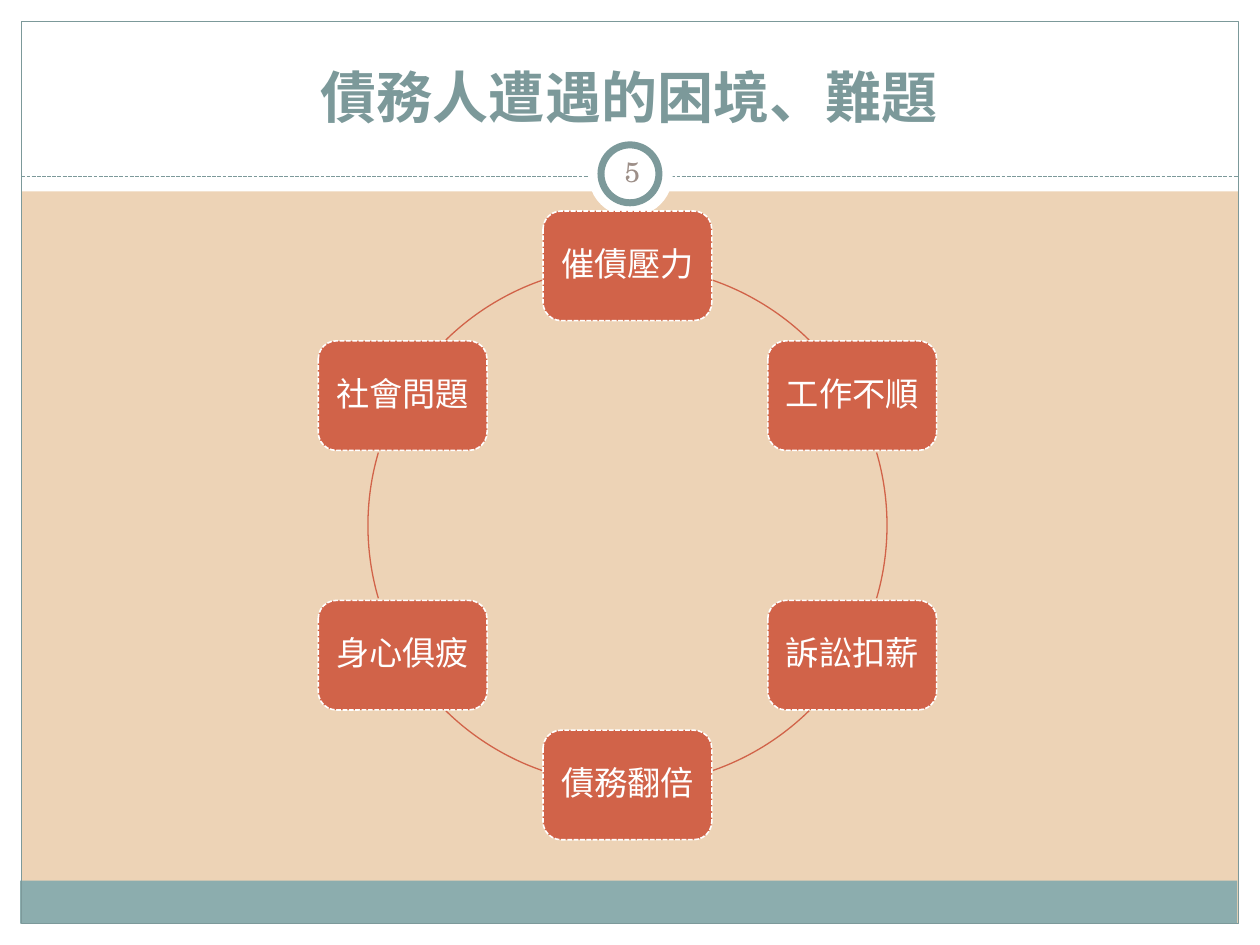
"""Build a slide with six debtor difficulties arranged around a circle."""
from math import cos, radians, sin

from lxml.etree import SubElement
from pptx import Presentation
from pptx.dml.color import RGBColor
from pptx.enum.dml import MSO_LINE
from pptx.enum.shapes import MSO_CONNECTOR, MSO_SHAPE as Shape
from pptx.enum.text import MSO_ANCHOR as Anchor, MSO_AUTO_SIZE, PP_ALIGN
from pptx.oxml.ns import qn
from pptx.util import Inches, Pt

TITLE = "債務人遭遇的困境、難題"
PAGE = "5"
PROBLEMS = ["催債壓力", "工作不順", "訴訟扣薪", "債務翻倍", "身心俱疲", "社會問題"]
ARCS = [(289.2, 314.4), (343.7, 16.3), (45.6, 70.8),
        (109.2, 134.4), (163.7, 196.3), (225.6, 250.8)]

THEME = {
    "font": "TeX Gyre Schola",
    "sand": "EDD3B6", "white": "FFFFFF", "teal": "7C999A",
    "band": "8CADAE", "red": "D16349", "number": "9D8F88",
    "title_size": 32, "node_size": 19, "number_size": 16,
}
W, H, MARGIN = 10, 7.5, 0.17
CX, CY, RADIUS = 4.98, 4.17, 2.06
NODE_W, NODE_H = 1.34, 0.87
PANELS = [
    (Shape.RECTANGLE, (0, H - MARGIN, W, MARGIN), "white", None, 0),
    (Shape.RECTANGLE, (0, 0, W, 1.52), "white", None, 0),
    (Shape.RECTANGLE, (0, 0, MARGIN, H), "white", None, 0),
    (Shape.RECTANGLE, (W - MARGIN, 0, MARGIN, H), "white", None, 0),
    (Shape.RECTANGLE, (0.16, 6.99, 9.66, 0.34), "band", None, 0),
    (Shape.RECTANGLE, (MARGIN, MARGIN, 9.66, 7.16), None, "teal", 0.75),
]
BADGE = [
    (Shape.OVAL, (4.67, 1.05, 0.67, 0.67), "white", None, 0),
    (Shape.OVAL, (4.77, 1.15, 0.46, 0.46), "white", "teal", 4),
]


def color(name):
    return RGBColor.from_string(THEME[name])


def place(sp, box):
    sp.left, sp.top, sp.width, sp.height = map(Inches, box)


def set_line(line, name, width, dashed=False):
    line.color.rgb = color(name)
    line.width = Pt(width)
    if dashed:
        line.dash_style = MSO_LINE.SQUARE_DOT


def add_shape(s, kind, box, fill=None, line=None, width=0, dashed=False):
    sp = s.shapes.add_shape(kind, *map(Inches, box))
    sp.shadow.inherit = False
    if fill:
        sp.fill.solid()
        sp.fill.fore_color.rgb = color(fill)
    else:
        sp.fill.background()
    if line:
        set_line(sp.line, line, width, dashed)
    else:
        sp.line.fill.background()
    return sp


def write(sp, text, size, fill, bold=False, anchor=Anchor.MIDDLE,
          inset=(0.05, 0.05), spacing=None):
    tf = sp.text_frame
    tf.word_wrap = True
    tf.auto_size = MSO_AUTO_SIZE.NONE
    tf.vertical_anchor = anchor
    tf.margin_left = tf.margin_right = Inches(inset[0])
    tf.margin_top = tf.margin_bottom = Inches(inset[1])
    p = tf.paragraphs[0]
    p.alignment = PP_ALIGN.CENTER
    if spacing:
        p.line_spacing = spacing
    r = p.add_run()
    r.text = text
    r.font.name = THEME["font"]
    r.font.size = Pt(THEME[size])
    r.font.bold = bold
    r.font.color.rgb = color(fill)


def add_frame(s):
    for panel in PANELS:
        add_shape(s, *panel)
    rule = s.shapes.add_connector(
        MSO_CONNECTOR.STRAIGHT, *map(Inches, (MARGIN, 1.4, W - MARGIN, 1.4)))
    set_line(rule.line, "teal", 0.75, dashed=True)
    SubElement(rule.element.spPr, qn("a:effectLst"))
    for circle in BADGE:
        add_shape(s, *circle)


def add_headings(s):
    title = s.shapes.title
    title.element.getparent().append(title.element)
    place(title, (0.33, 0.25, 9.33, 0.83))
    write(title, TITLE, "title_size", "teal", bold=True,
          anchor=Anchor.BOTTOM, inset=(0.1, 0.05))
    number = s.shapes.add_textbox(*map(Inches, (4.77, 1.12, 0.5, 0.48)))
    write(number, PAGE, "number_size", "number")


def add_cycle(s):
    ring = (CX - RADIUS, CY - RADIUS, 2 * RADIUS, 2 * RADIUS)
    for i, (text, arc) in enumerate(zip(PROBLEMS, ARCS)):
        angle = radians(360 / len(PROBLEMS) * i - 90)
        x = CX + RADIUS * cos(angle) - NODE_W / 2
        y = CY + RADIUS * sin(angle) - NODE_H / 2
        node = add_shape(s, Shape.ROUNDED_RECTANGLE, (x, y, NODE_W, NODE_H),
                         "red", "white", 0.9, dashed=True)
        write(node, text, "node_size", "white", inset=(0.08, 0.08), spacing=0.9)
        link = add_shape(s, Shape.ARC, ring, None, "red", 0.75)
        for k, degrees in enumerate(arc):
            link.adjustments[k] = degrees * 0.6


def main():
    prs = Presentation()
    prs.slide_width, prs.slide_height = Inches(W), Inches(H)
    s = prs.slides.add_slide(prs.slide_layouts[5])
    s.background.fill.solid()
    s.background.fill.fore_color.rgb = color("sand")
    add_frame(s)
    add_headings(s)
    add_cycle(s)
    prs.save("out.pptx")


if __name__ == "__main__":
    main()
